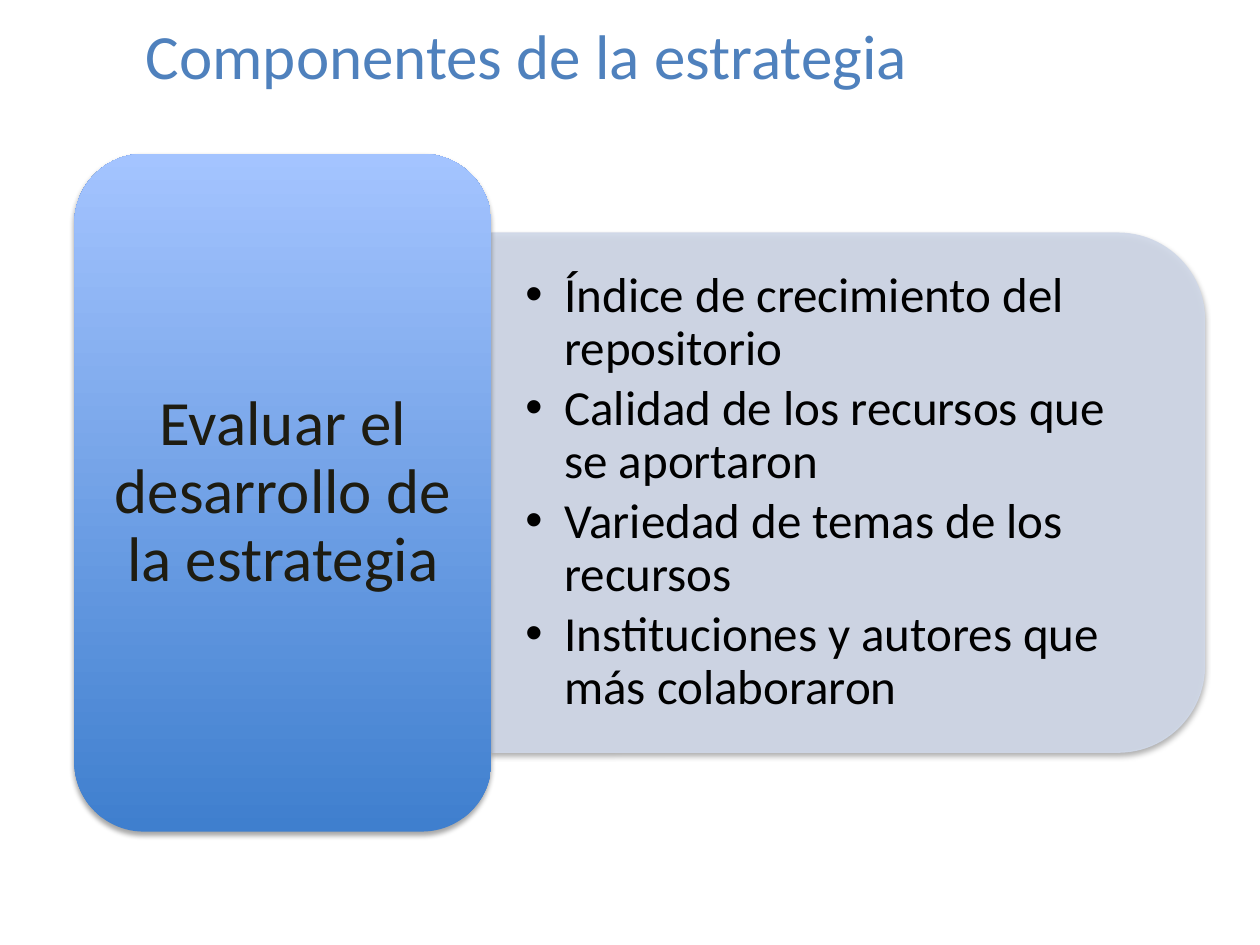
from lxml import etree
from pptx import Presentation
from pptx import util as u
from pptx.dml.color import RGBColor
from pptx.enum import shapes, text
from pptx.oxml.ns import qn

WIDTH, HEIGHT = 10, 7.5
FONT = "Calibri"
TITLE = "Componentes de la estrategia"
STAGE = "Evaluar el desarrollo de la estrategia"
INDICATORS = [
    "Índice de crecimiento del repositorio",
    "Calidad de los recursos que se aportaron",
    "Variedad de temas de los recursos",
    "Instituciones y autores que más colaboraron",
]

# Layout: both panels share one middle line
MIDDLE = 0.52 * HEIGHT + 0.01
STAGE_LEFT, STAGE_WIDTH, STAGE_HEIGHT = 0.59, 3.31, 5.38
LIST_LEFT = STAGE_LEFT + STAGE_WIDTH
LIST_WIDTH, LIST_HEIGHT = 5.66, 4.12


def color(hex_string):
    return RGBColor.from_string(hex_string)


def centred_box(left, width, height):
    """Box centred vertically on the middle line."""
    return [u.Inches(n) for n in (left, MIDDLE - height / 2, width, height)]


def add_child(parent, tag, **attributes):
    child = etree.SubElement(parent, qn(tag))
    for name, value in attributes.items():
        child.set(name, str(value))
    return child


def add_shadow(shape):
    shape.shadow.inherit = False
    effects = shape._element.spPr.find(qn("a:effectLst"))
    shadow = add_child(effects, "a:outerShdw", blurRad=u.Pt(3.1), dist=u.Pt(1.8),
                       dir=90 * 60000, rotWithShape=0)
    black = add_child(shadow, "a:srgbClr", val="000000")
    add_child(black, "a:alpha", val=35000)


def add_list_panel(slide):
    """Panel with rounded right corners: an upright shape turned by 90 degrees."""
    center = LIST_LEFT + LIST_WIDTH / 2
    panel = slide.shapes.add_shape(
        shapes.MSO_SHAPE.ROUND_2_SAME_RECTANGLE,
        *centred_box(center - LIST_HEIGHT / 2, LIST_HEIGHT, LIST_WIDTH))
    panel.rotation = 90
    panel.fill.solid()
    panel.fill.fore_color.rgb = color("D0D8E8")
    panel.line.color.rgb = color("D0D8E8")
    panel.line.width = u.Pt(0.75)
    for tint in panel._element.spPr.iter(qn("a:srgbClr")):
        add_child(tint, "a:alpha", val=90000)
    add_shadow(panel)


def add_stage_panel(slide):
    panel = slide.shapes.add_shape(
        shapes.MSO_SHAPE.ROUNDED_RECTANGLE,
        *centred_box(STAGE_LEFT, STAGE_WIDTH, STAGE_HEIGHT))
    panel.fill.gradient()
    panel.fill.gradient_angle = 90
    stops = zip(panel.fill.gradient_stops, (0, 1), ("3F7FCE", "A4C4FF"))
    for stop, position, tint in stops:
        stop.position = position
        stop.color.rgb = color(tint)
    panel.line.fill.background()
    add_shadow(panel)


def add_bullet(paragraph, indent):
    properties = paragraph._p.get_or_add_pPr()
    properties.set("marL", str(u.Inches(indent)))
    properties.set("indent", str(-u.Inches(indent)))
    add_child(properties, "a:buFont", typeface="Arial")
    add_child(properties, "a:buChar", char="•")


def add_text(slide, box, lines, size, tint, insets=(0.1, 0.05),
             alignment=text.PP_ALIGN.LEFT, spacing=1, after=0, indent=None):
    frame = slide.shapes.add_textbox(*box).text_frame
    frame.word_wrap = True
    frame.vertical_anchor = text.MSO_ANCHOR.MIDDLE
    frame.margin_left = frame.margin_right = u.Inches(insets[0])
    frame.margin_top = frame.margin_bottom = u.Inches(insets[1])
    frame.text = "\n".join(lines)
    for paragraph in frame.paragraphs:
        paragraph.alignment = alignment
        paragraph.line_spacing = spacing
        paragraph.space_after = u.Pt(after)
        if indent:
            add_bullet(paragraph, indent)
        for run in paragraph.runs:
            run.font.name = FONT
            run.font.size = u.Pt(size)
            run.font.color.rgb = color(tint)


def main():
    presentation = Presentation()
    presentation.slide_width = u.Inches(WIDTH)
    presentation.slide_height = u.Inches(HEIGHT)
    slide = presentation.slides.add_slide(presentation.slide_layouts[6])

    # Title
    title_box = [u.Inches(n) for n in (1.06, 0.13, 8.09, 0.6)]
    add_text(slide, title_box, [TITLE], 36, "4F81BD")

    # Indicators on the right
    add_list_panel(slide)
    add_text(slide, centred_box(LIST_LEFT, 5.46, 3.72), INDICATORS, 28, "000000",
             insets=(0.27, 0.14), spacing=0.9, after=4.2, indent=0.31)

    # Stage on the left, in front
    add_stage_panel(slide)
    add_text(slide, centred_box(STAGE_LEFT + 0.16, 2.99, 5.05), [STAGE], 36, "1E1C11",
             insets=(0.15, 0.07), alignment=text.PP_ALIGN.CENTER, spacing=0.9, after=12.6)

    presentation.save("out.pptx")


if __name__ == "__main__":
    main()
